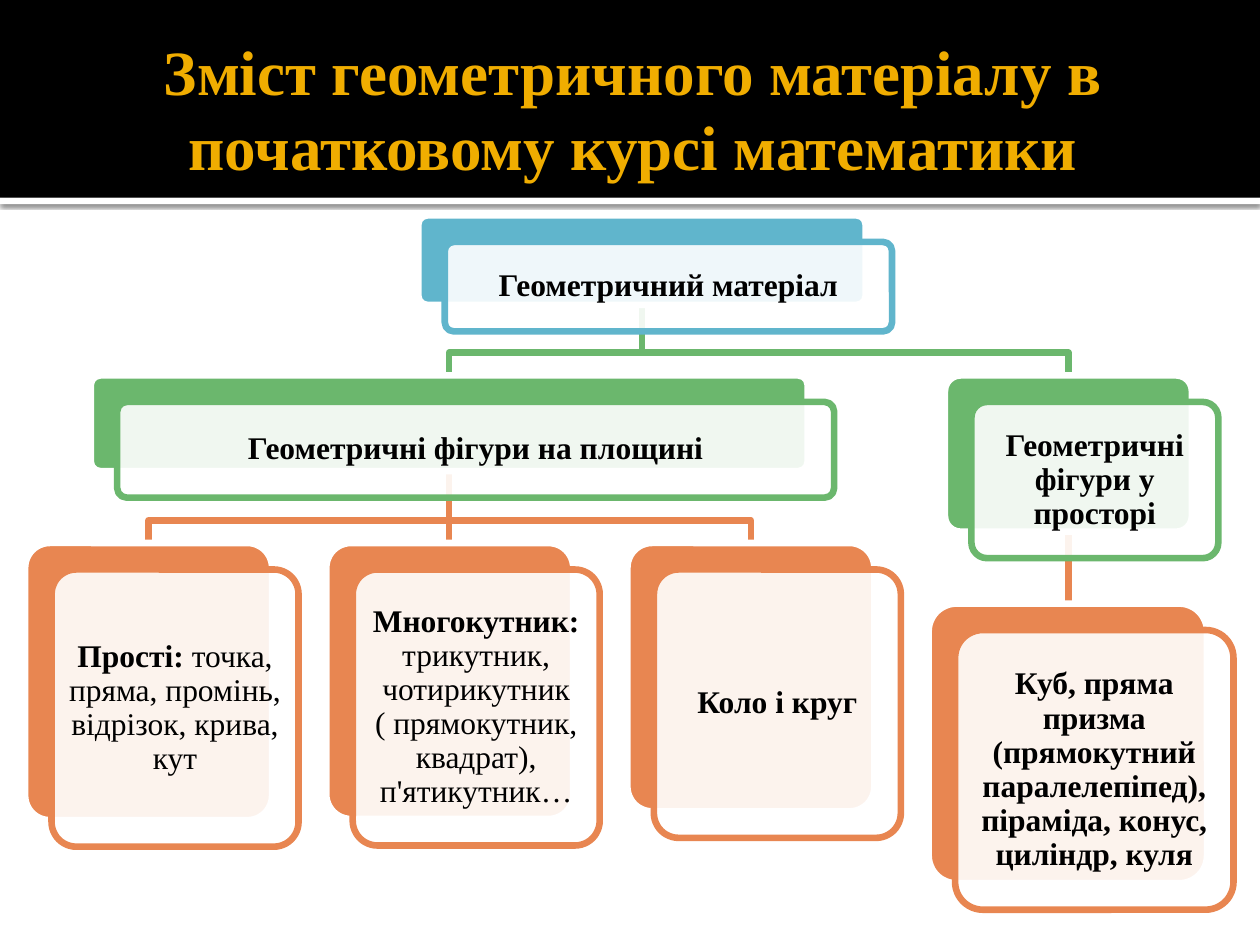
from dataclasses import dataclass

from lxml.etree import SubElement
from pptx import Presentation
from pptx.dml.color import RGBColor
from pptx.enum.shapes import MSO_CONNECTOR as Connector, MSO_SHAPE as Shape
from pptx.enum.text import MSO_ANCHOR as Anchor, PP_ALIGN as Align
from pptx.oxml.ns import qn
from pptx.util import Inches, Pt


@dataclass(frozen=True)
class Theme:
    """Colours, font and type sizes of the slide."""
    black: str = "000000"
    white: str = "FFFFFF"
    gold: str = "F0AD00"
    root: str = "60B5CC"
    branch: str = "6BB76D"
    leaf: str = "E88651"
    font: str = "Times New Roman"
    title_size: float = 36
    card_size: float = 18
    line_width: float = 3.78


@dataclass(frozen=True)
class Topic:
    """One card of the hierarchy: place, colour and wording."""
    left: float
    top: float
    width: float
    height: float
    colour: str
    heading: str
    details: str = ""

    @property
    def centre(self):
        """Return the horizontal middle of the back plate."""
        return self.left + self.width / 2

    @property
    def bottom(self):
        """Return the lower edge of the back plate."""
        return self.top + self.height


THEME = Theme()
OFFSET = 0.21
CORNER = 0.1
ELBOW_RISE = 0.18


def rgb(colour):
    """Turn a hex string into a colour."""
    return RGBColor.from_string(colour)


def style_line(line, colour):
    """Give a line the diagram's width and a colour."""
    line.color.rgb = rgb(colour)
    line.width = Pt(THEME.line_width)


def add_block(slide, kind, left, top, width, height, colour):
    """Add a filled preset shape without line or shadow."""
    block = slide.shapes.add_shape(
        kind, Inches(left), Inches(top), Inches(width), Inches(height))
    block.shadow.inherit = False
    block.fill.solid()
    block.fill.fore_color.rgb = rgb(colour)
    block.line.fill.background()
    return block


def set_alpha(colour_element, percent):
    """Set the opacity of a colour element."""
    SubElement(colour_element, qn("a:alpha")).set("val", str(percent * 1000))


def add_strip_shadow(strip):
    """Cast a soft shadow below the white strip."""
    effects = strip.element.spPr.find(qn("a:effectLst"))
    shadow = SubElement(effects, qn("a:outerShdw"), blurRad=str(Pt(2.5)),
                        dist=str(Pt(0.8)), dir="5400000", rotWithShape="0")
    set_alpha(SubElement(shadow, qn("a:srgbClr"), val=THEME.black), 60)


def style_run(run, size, colour, bold=True):
    """Format a run in the slide's font."""
    run.font.name = THEME.font
    run.font.size = Pt(size)
    run.font.bold = bold
    run.font.color.rgb = rgb(colour)


def set_frame(frame, left, top, right, bottom):
    """Wrap, centre and inset a text frame."""
    frame.word_wrap = True
    frame.vertical_anchor = Anchor.MIDDLE
    frame.margin_left, frame.margin_top = Inches(left), Inches(top)
    frame.margin_right, frame.margin_bottom = Inches(right), Inches(bottom)


def add_header(slide, title):
    """Add the black header, its white strip and the title."""
    strip = add_block(slide, Shape.RECTANGLE, 0, 1.57, 10, 0.05, THEME.white)
    add_strip_shadow(strip)
    add_block(slide, Shape.RECTANGLE, 0, 0, 10, 1.57, THEME.black)
    heading = slide.shapes.add_textbox(
        Inches(0.5), Inches(0.17), Inches(9), Inches(1.37))
    frame = heading.text_frame
    set_frame(frame, 0.1, 0.05, 0.05, 0.05)
    frame.text = title
    frame.paragraphs[0].alignment = Align.CENTER
    style_run(frame.paragraphs[0].runs[0], THEME.title_size, THEME.gold)


def add_link(slide, parent, child):
    """Join a parent to a child, straight or with an elbow."""
    start_x, start_y = Inches(parent.centre), Inches(parent.bottom)
    end_x, end_y = Inches(child.centre), Inches(child.top)
    if abs(parent.centre - child.centre) < 0.02:
        link = slide.shapes.add_connector(
            Connector.STRAIGHT, start_x, start_y, start_x, end_y)
        SubElement(link.element.spPr, qn("a:effectLst"))
    else:
        elbow_y = Inches(child.top - ELBOW_RISE)
        route = slide.shapes.build_freeform(start_x, start_y)
        route.add_line_segments(
            [(start_x, elbow_y), (end_x, elbow_y), (end_x, end_y)], close=False)
        link = route.convert_to_shape()
        link.shadow.inherit = False
        link.fill.background()
    style_line(link.line, child.colour)


def add_plate(slide, topic, shift, fill, outline):
    """Add one rounded plate of a card."""
    plate = add_block(slide, Shape.ROUNDED_RECTANGLE, topic.left + shift,
                      topic.top + shift, topic.width, topic.height, fill)
    plate.adjustments[0] = CORNER
    style_line(plate.line, outline)
    return plate


def add_card(slide, topic):
    """Add a coloured back plate and a captioned front plate."""
    add_plate(slide, topic, 0, topic.colour, THEME.white)
    front = add_plate(slide, topic, OFFSET, THEME.white, topic.colour)
    set_alpha(front.element.spPr.find(qn("a:solidFill"))[0], 90)
    inset = 0.07 - 0.29 * CORNER * min(topic.width, topic.height)
    set_frame(front.text_frame, inset, inset, inset, inset)
    caption = front.text_frame.paragraphs[0]
    caption.text = topic.heading
    caption.alignment = Align.CENTER
    caption.line_spacing = 0.9
    caption.space_after = Pt(0.35 * THEME.card_size)
    style_run(caption.runs[0], THEME.card_size, THEME.black)
    if topic.details:
        details = caption.add_run()
        details.text = topic.details
        style_run(details, THEME.card_size, THEME.black, bold=False)


def main():
    """Build the slide and save it."""
    deck = Presentation()
    deck.slide_width, deck.slide_height = Inches(10), Inches(7.5)
    slide = deck.slides.add_slide(deck.slide_layouts[6])
    add_header(slide, "Зміст геометричного матеріалу в початковому курсі математики")

    material = Topic(3.32, 1.71, 3.55, 0.71, THEME.root, "Геометричний матеріал")
    plane = Topic(0.72, 2.98, 5.69, 0.76, THEME.branch,
                  "Геометричні фігури на площині")
    space = Topic(7.5, 2.98, 1.96, 1.24, THEME.branch,
                  "Геометричні фігури у просторі")
    simple = Topic(0.2, 4.31, 1.96, 2.2, THEME.leaf, "Прості: ",
                   "точка, пряма, промінь, відрізок, крива, кут")
    polygon = Topic(2.59, 4.31, 1.96, 2.19, THEME.leaf, "Многокутник: ",
                    "трикутник, чотирикутник ( прямокутник, квадрат), п'ятикутник…")
    circle = Topic(4.98, 4.31, 1.96, 2.13, THEME.leaf, "Коло і круг")
    solids = Topic(7.37, 4.79, 2.21, 2.22, THEME.leaf,
                   "Куб, пряма призма (прямокутний паралелепіпед), "
                   "піраміда, конус, циліндр, куля")

    children = {space: [solids], plane: [circle, polygon, simple],
                material: [space, plane]}
    for parent, offspring in children.items():
        for child in offspring:
            add_link(slide, parent, child)
    for topic in (material, plane, simple, polygon, circle, space, solids):
        add_card(slide, topic)
    deck.save("out.pptx")


if __name__ == "__main__":
    main()
